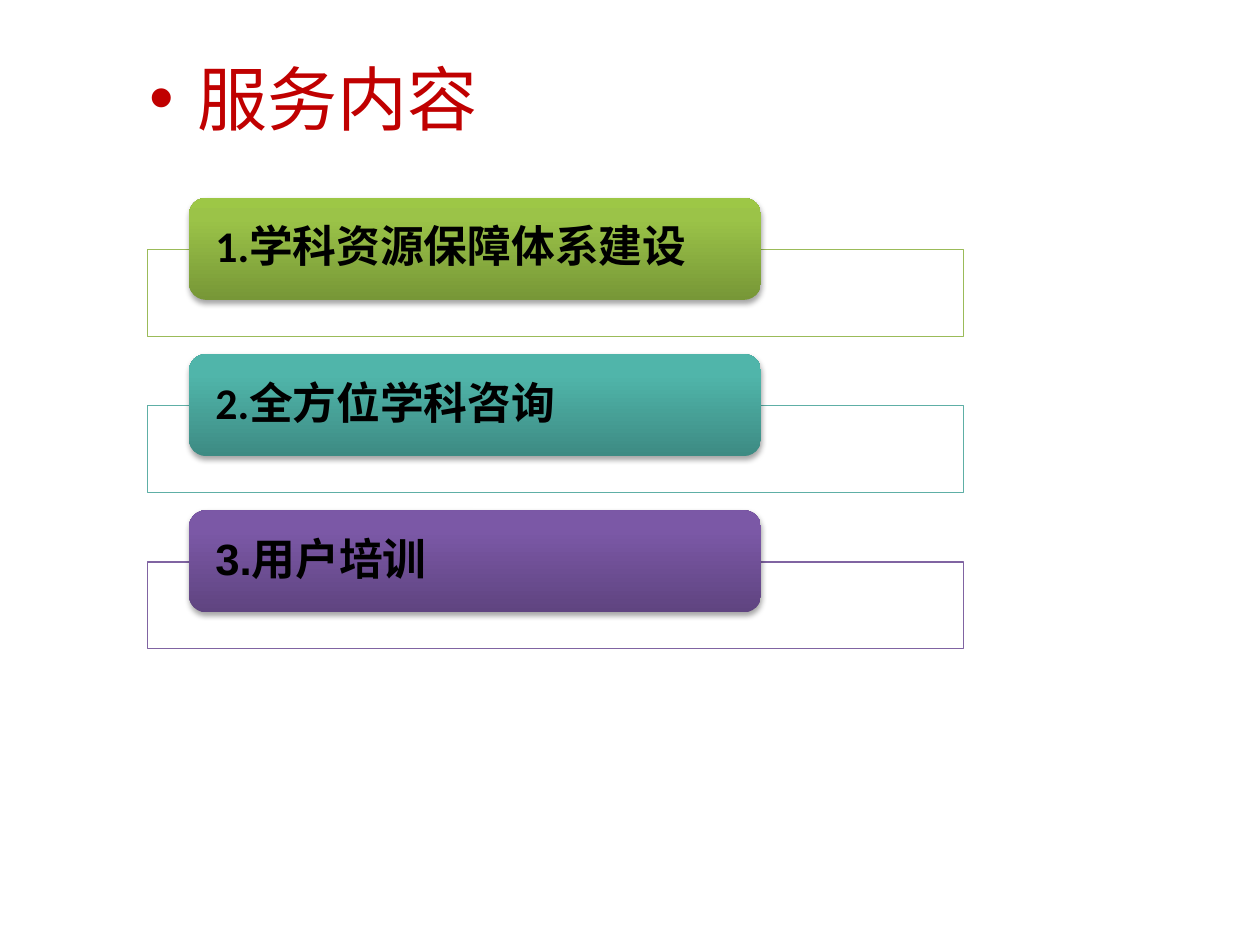
from copy import deepcopy

from lxml import etree
from pptx import Presentation
from pptx.dml.color import RGBColor
from pptx.enum.shapes import MSO_SHAPE
from pptx.enum.text import MSO_ANCHOR
from pptx.oxml.ns import qn
from pptx.util import Inches, Pt

RECTANGLE = MSO_SHAPE.RECTANGLE
ROUNDED = MSO_SHAPE.ROUNDED_RECTANGLE
MIDDLE = MSO_ANCHOR.MIDDLE

WIDTH, HEIGHT = Inches(10), Inches(7.5)
COLUMNS, ROWS = 100, 75
FIRST_ROW, ROW_STEP = 15.7, 12.4
STOPS = (0, 0.8, 1)

COLORS = {
    "title": "C00000",
    "text": "000000",
    "panel": "FFFFFF",
    "shadow": "000000",
    "green": ("9BBB59", "779737", "9BC348", "9DC746"),
    "teal": ("5EAFA6", "3D8B83", "50B5AA", "4EB8AC"),
    "purple": ("8064A2", "5F4480", "7B58A6", "7C57A8"),
}

SERVICES = (
    ("1.学科资源保障体系建设", "green", "Calibri"),
    ("2.全方位学科咨询", "teal", "Calibri"),
    ("3.用户培训", "purple", "Arial"),
)


def grid(column, row, columns, rows):
    """Turn grid cells into left, top, width and height."""
    across, down = WIDTH / COLUMNS, HEIGHT / ROWS
    return [round(n) for n in (column * across, row * down, columns * across, rows * down)]


def add_alpha(color, percent):
    """Give a colour element an opacity."""
    etree.SubElement(color, qn("a:alpha"), val=str(percent * 1000))


def format_text(para, size, font, color, bold=False):
    """Format every run of a paragraph."""
    for span in para.runs:
        span.font.size = Pt(size)
        span.font.name = font
        span.font.bold = bold
        span.font.color.rgb = RGBColor.from_string(color)


def add_panel(page, row, line_color):
    """Add the thin outlined panel behind a service."""
    panel = page.shapes.add_shape(RECTANGLE, *grid(11.7, row, 64.8, 6.9))
    panel.shadow.inherit = False
    panel.fill.solid()
    panel.fill.fore_color.rgb = RGBColor.from_string(COLORS["panel"])
    add_alpha(panel.element.spPr.find(qn("a:solidFill"))[0], 90)
    panel.line.color.rgb = RGBColor.from_string(line_color)
    panel.line.width = Pt(0.75)


def add_button(page, row, gradient):
    """Add the rounded gradient box with its soft shadow."""
    button = page.shapes.add_shape(ROUNDED, *grid(15, row, 45.4, 8.1))
    button.shadow.inherit = False
    button.line.fill.background()
    button.fill.gradient()
    button.fill.gradient_angle = 90
    properties = button.element.spPr
    stop_list = properties.find(qn("a:gradFill")).find(qn("a:gsLst"))
    stop_list.append(deepcopy(stop_list[0]))
    for stop, position, color in zip(button.fill.gradient_stops, STOPS, gradient):
        stop.position = position
        stop.color.rgb = RGBColor.from_string(color)
    shadow = etree.SubElement(
        properties.find(qn("a:effectLst")), qn("a:outerShdw"),
        blurRad="40000", dist="23000", dir="5400000", rotWithShape="0")
    add_alpha(etree.SubElement(shadow, qn("a:srgbClr"), val=COLORS["shadow"]), 35)


def add_label(page, row, text, font):
    """Add the bold name of a service."""
    box = page.shapes.add_textbox(*grid(15.4, row, 44.6, 7.3))
    frame = box.text_frame
    frame.word_wrap = True
    frame.vertical_anchor = MIDDLE
    frame.margin_left = frame.margin_right = Inches(0.17)
    frame.margin_top = frame.margin_bottom = 0
    frame.text = text
    para = frame.paragraphs[0]
    para.line_spacing = 0.9
    para.space_after = Pt(8.75)
    format_text(para, 25, font, COLORS["text"], bold=True)


def add_title(page, text):
    """Add the bulleted heading."""
    box = page.shapes.add_textbox(*grid(10.9, 3.9, 37.5, 10.2))
    frame = box.text_frame
    frame.word_wrap = True
    frame.text = text
    para = frame.paragraphs[0]
    para.space_before = Pt(8)
    format_text(para, 40, "Calibri", COLORS["title"])
    properties = para._p.get_or_add_pPr()
    indent = Inches(0.38)
    properties.set("marL", str(indent))
    properties.set("indent", str(-indent))
    etree.SubElement(properties, qn("a:buFont"), typeface="Arial")
    etree.SubElement(properties, qn("a:buChar"), char="•")


def main():
    """Build the slide and save it."""
    deck = Presentation()
    deck.slide_width, deck.slide_height = WIDTH, HEIGHT
    page = deck.slides.add_slide(deck.slide_layouts[6])
    for index, (text, color, font) in enumerate(SERVICES):
        row = FIRST_ROW + index * ROW_STEP
        line_color, *gradient = COLORS[color]
        add_panel(page, row + 4.1, line_color)
        add_button(page, row, gradient)
        add_label(page, row + 0.4, text, font)
    add_title(page, "服务内容")
    deck.save("out.pptx")


if __name__ == "__main__":
    main()
